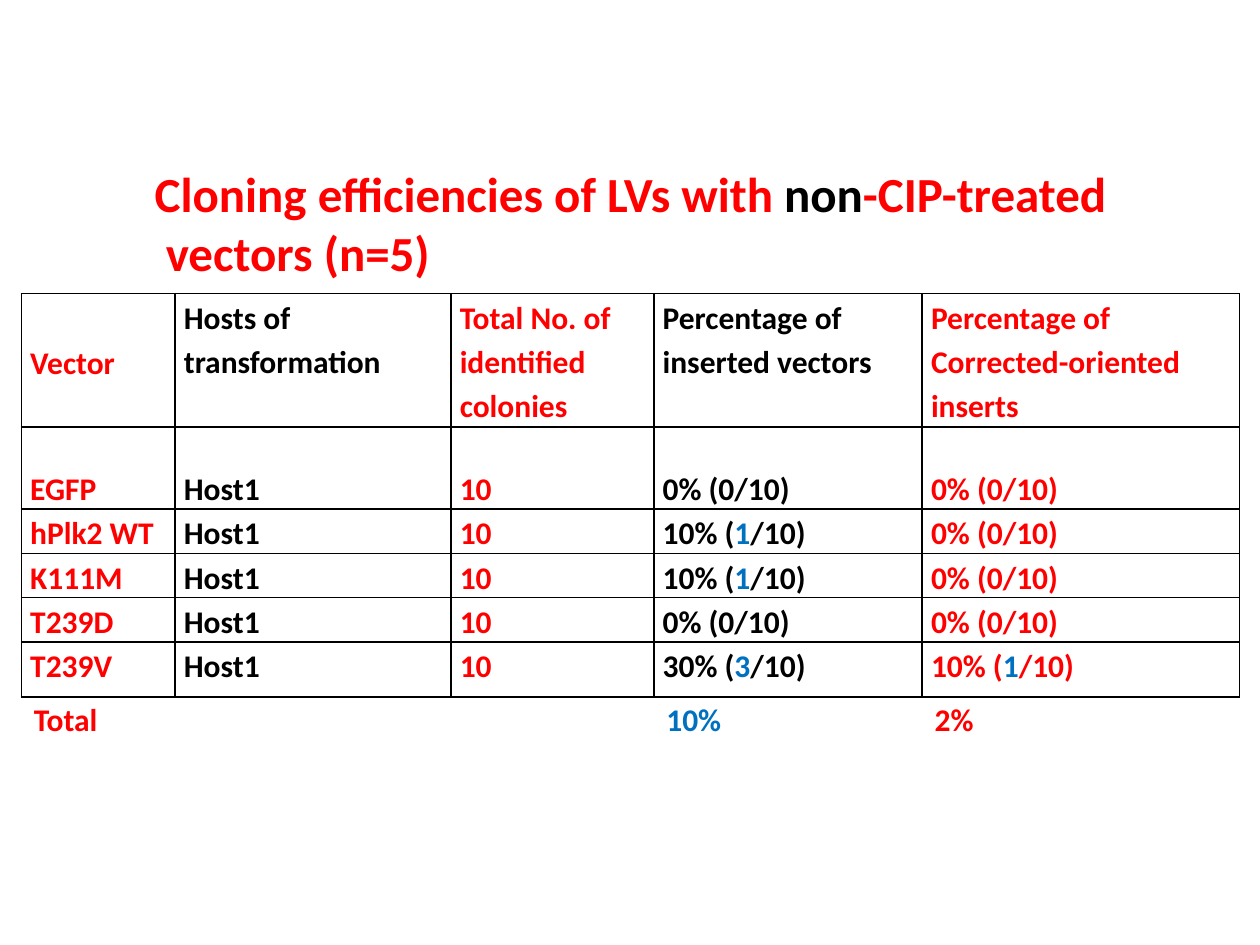
from itertools import accumulate

from lxml import etree
from pptx import Presentation
from pptx import util as u
from pptx.dml.color import RGBColor
from pptx.enum import text
from pptx.oxml.ns import qn

RED = RGBColor(0xFF, 0x00, 0x00)
BLACK = RGBColor(0x00, 0x00, 0x00)
BLUE = RGBColor(0x00, 0x70, 0xC0)
FONT = "Calibri"
BODY, TITLE = 18, 28

LEFT, TOP = 0.17, 2.33
COLUMN_WIDTHS = [1.22, 2.19, 1.61, 2.13, 2.52]
COLUMN_COLORS = [RED, BLACK, RED, BLACK, RED]
ROW_HEIGHTS = [1.06, 0.65, 0.35, 0.35, 0.35, 0.44]

HEADERS = [
    "Vector",
    "Hosts of transformation",
    "Total No. of identified colonies",
    "Percentage of inserted vectors",
    "Percentage of\nCorrected-oriented inserts",
]
HOST = "Host1"
COLONIES = 10
# vector, colonies with an insert, colonies with a correctly oriented insert
RESULTS = [
    ("EGFP", 0, 0),
    ("hPlk2 WT", 1, 0),
    ("K111M", 1, 0),
    ("T239D", 0, 0),
    ("T239V", 3, 1),
]


def add_runs(para, runs, size):
    for words, color in runs:
        span = para.add_run()
        span.text = words
        span.font.name = FONT
        span.font.size = u.Pt(size)
        span.font.bold = True
        span.font.color.rgb = color


def fill_frame(frame, lines, size, spacing=None):
    """Write one paragraph per line; a line is a list of (words, color)."""
    for index, runs in enumerate(lines):
        para = frame.add_paragraph() if index else frame.paragraphs[0]
        if spacing:
            para.line_spacing = spacing
        add_runs(para, runs, size)


def add_label(page, left, top, width, height, lines, size, wrap=True):
    box = page.shapes.add_textbox(*map(u.Inches, (left, top, width, height)))
    box.text_frame.word_wrap = wrap
    fill_frame(box.text_frame, lines, size)


def add_borders(cell):
    properties = cell._tc.get_or_add_tcPr()
    for position, side in enumerate(("lnL", "lnR", "lnT", "lnB")):
        line = etree.Element(qn(f"a:{side}"), w=str(u.Pt(1)))
        fill = etree.SubElement(line, qn("a:solidFill"))
        etree.SubElement(fill, qn("a:srgbClr"), val=str(BLACK))
        properties.insert(position, line)


def share_runs(count, color):
    """Percentage with its fraction, a nonzero count picked out in blue."""
    percent = f"{100 * count // COLONIES}% ("
    rest = f"/{COLONIES})"
    if not count:
        return [(f"{percent}{count}{rest}", color)]
    return [(percent, color), (str(count), BLUE), (rest, color)]


def table_rows():
    """Rows of cells, each cell a list of lines."""
    yield [
        [[(line, color)] for line in header.split("\n")]
        for header, color in zip(HEADERS, COLUMN_COLORS)
    ]
    for vector, inserted, oriented in RESULTS:
        plain = zip((vector, HOST, str(COLONIES)), COLUMN_COLORS)
        shares = zip((inserted, oriented), COLUMN_COLORS[3:])
        yield [[[run]] for run in plain] + [[share_runs(*share)] for share in shares]


def add_results_table(page):
    table = page.shapes.add_table(
        len(ROW_HEIGHTS), len(COLUMN_WIDTHS), u.Inches(LEFT), u.Inches(TOP),
        u.Inches(sum(COLUMN_WIDTHS)), u.Inches(sum(ROW_HEIGHTS)),
    ).table
    table.first_row = table.horz_banding = False
    for column, width in zip(table.columns, COLUMN_WIDTHS):
        column.width = u.Inches(width)
    for row, height, contents in zip(table.rows, ROW_HEIGHTS, table_rows()):
        row.height = u.Inches(height)
        for cell, lines in zip(row.cells, contents):
            cell.margin_left = cell.margin_right = u.Inches(0.07)
            cell.margin_top = cell.margin_bottom = 0
            cell.fill.background()
            add_borders(cell)
            fill_frame(cell.text_frame, lines, BODY, spacing=1.15)
    table.cell(0, 0).vertical_anchor = text.MSO_ANCHOR.MIDDLE
    for cell in table.rows[1].cells:
        cell.vertical_anchor = text.MSO_ANCHOR.BOTTOM


def add_totals(page):
    lefts = list(accumulate(COLUMN_WIDTHS, initial=LEFT))
    top = TOP + sum(ROW_HEIGHTS) - 0.02
    for column, words, color in ((0, "Total", RED), (3, "10%", BLUE), (4, "2%", RED)):
        add_label(page, lefts[column], top, 0.8, 0.4, [[(words, color)]], BODY)


def main():
    deck = Presentation()
    deck.slide_width, deck.slide_height = u.Inches(10), u.Inches(7.5)
    page = deck.slides.add_slide(deck.slide_layouts[6])
    add_results_table(page)
    title = [
        [("Cloning efficiencies of LVs with ", RED), ("non", BLACK), ("-CIP-treated", RED)],
        [(" vectors (n=5)", RED)],
    ]
    add_label(page, 1.13, 1.25, 7.87, 1.04, title, TITLE, wrap=False)
    add_totals(page)
    deck.save("out.pptx")


if __name__ == "__main__":
    main()
